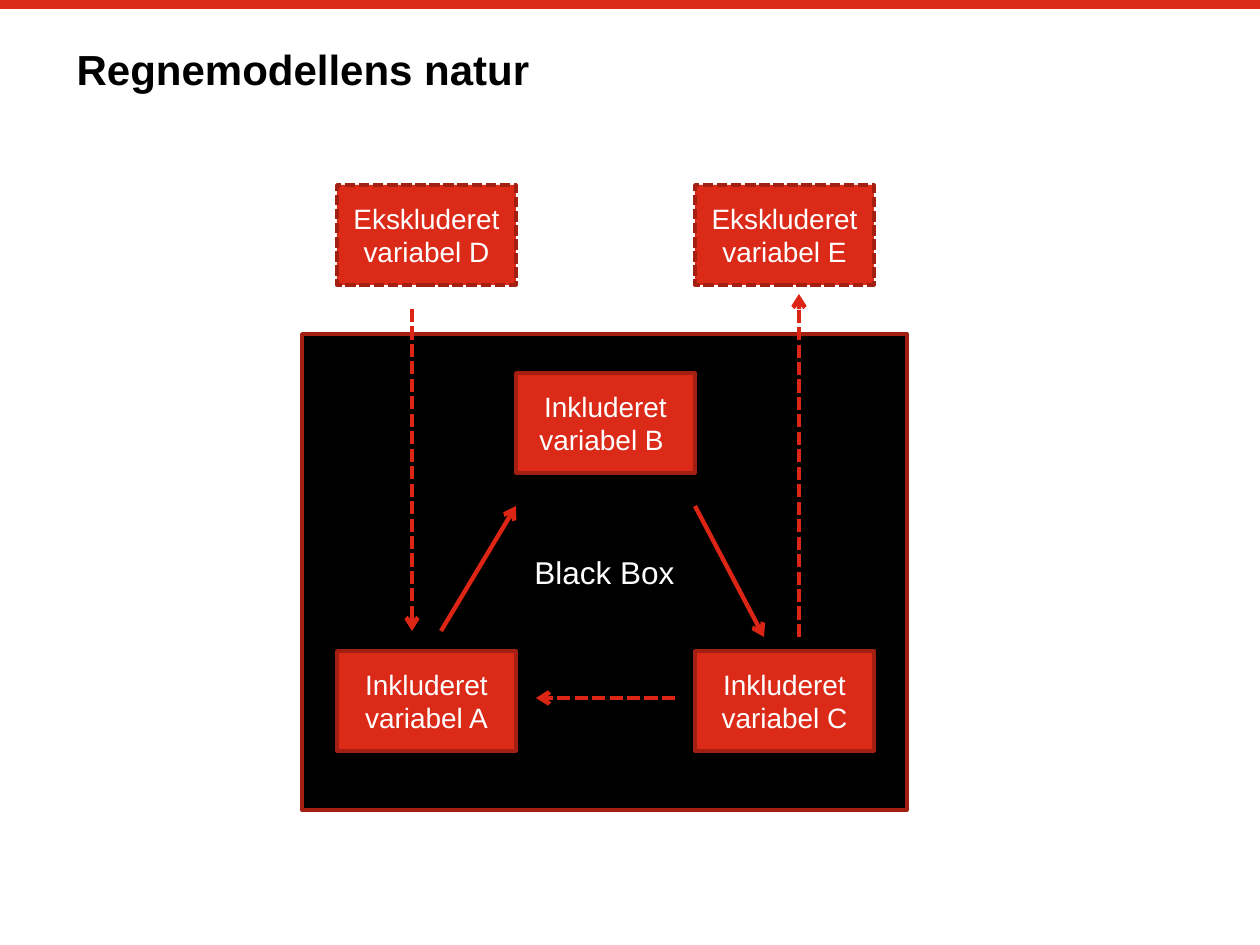
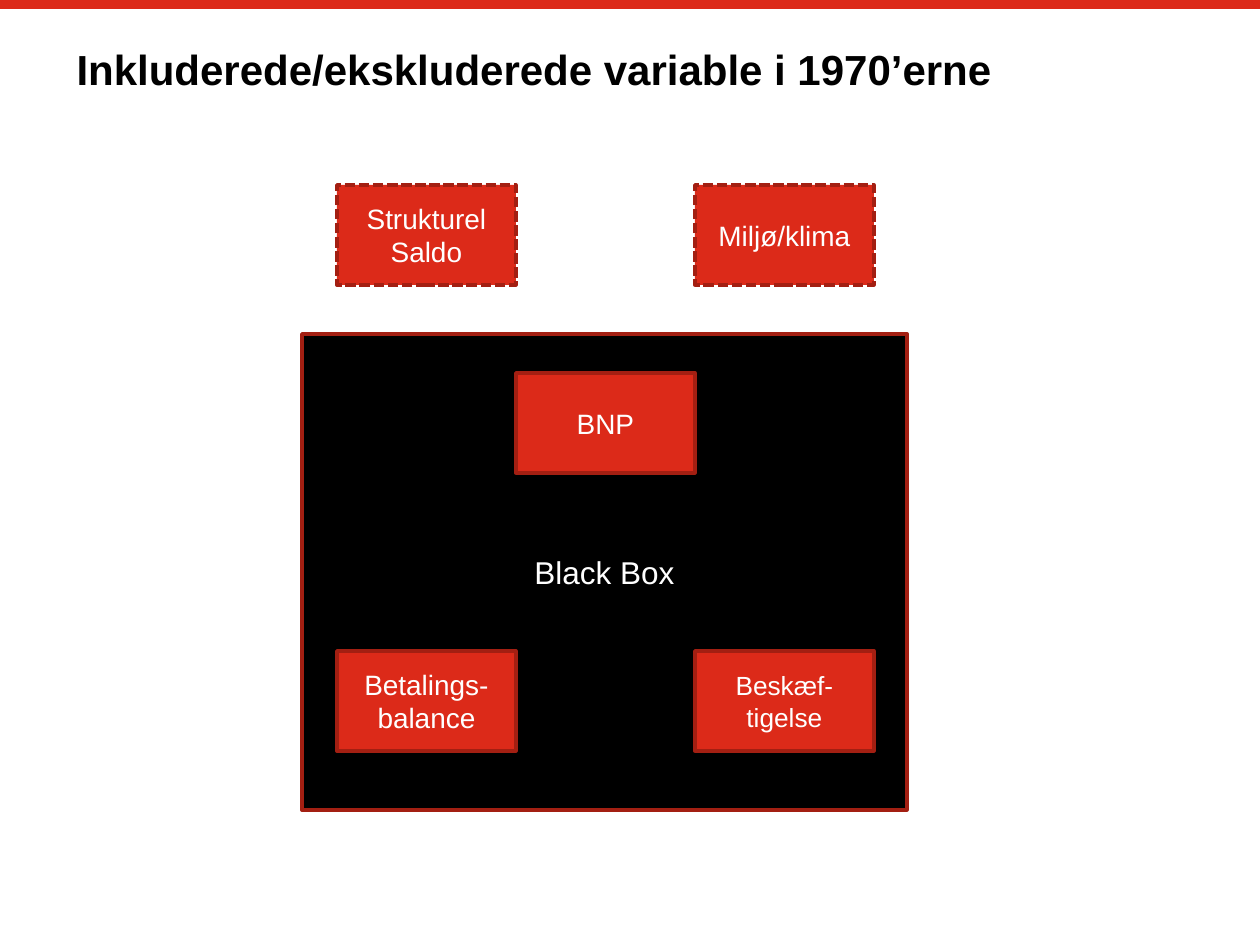
import pptx
import pptx.util
import pptx.dml.color
import pptx.enum.dml
import pptx.enum.shapes
import pptx.enum.text
import pptx.oxml.ns
import lxml.etree

RGB = pptx.dml.color.RGBColor
RED = RGB(0xDC, 0x2A, 0x19)
EDGE = RGB(0xA3, 0x1F, 0x12)
ARROW = RGB(0xDC, 0x25, 0x14)
BLACK = RGB(0, 0, 0)
WHITE = RGB(255, 255, 255)
DASH = pptx.enum.dml.MSO_LINE.SQUARE_DOT
RECT = pptx.enum.shapes.MSO_SHAPE.RECTANGLE
STRAIGHT = pptx.enum.shapes.MSO_CONNECTOR.STRAIGHT
ALIGN = pptx.enum.text.PP_ALIGN
ANCHOR = pptx.enum.text.MSO_ANCHOR
SCALE = 914400 / 126  # EMU in one px


def px(*nums):
    return [round(n * SCALE) for n in nums]


def write(shape, text, size=16, color=WHITE, bold=False,
          align=ALIGN.CENTER, anchor=ANCHOR.MIDDLE):
    frame = shape.text_frame
    frame.word_wrap = True
    frame.auto_size = pptx.enum.text.MSO_AUTO_SIZE.NONE
    frame.vertical_anchor = anchor
    par = frame.paragraphs[0]
    par.alignment = align
    run = par.add_run()
    run.text = text
    run.font.name = "Arial"
    run.font.size = pptx.util.Pt(size)
    run.font.bold = bold
    run.font.color.rgb = color


# Places of the variable boxes: left, top, dashed edge
WIDE, HIGH = 179, 100
LEFT, MID, RIGHT = 337, 516, 695
SPOTS = [(LEFT, 651, False), (MID, 373, False), (RIGHT, 651, False),
         (RIGHT, 185, True), (LEFT, 185, True)]

# Arrows: start, end, dashed
LINKS = [((441, 631), (516, 506), False),
         ((695, 506), (764, 637), False),
         ((799, 637), (799, 294), True),
         ((412, 309), (412, 631), True),
         ((675, 698), (536, 698), True)]

# Slides: title, texts and sizes in the order of the spots, arrows
PAGES = [
    ("Regnemodellens natur",
     [("Inkluderet variabel A", 16), ("Inkluderet variabel B ", 16),
      ("Inkluderet variabel C", 16), ("Ekskluderet variabel E", 16),
      ("Ekskluderet variabel D", 16)],
     LINKS),
    ("Inkluderede/ekskluderede variable i 1970’erne",
     [("Betalings-balance", 16), ("BNP", 16), ("Beskæf-tigelse", 15),
      ("Miljø/klima", 16), ("Strukturel Saldo", 16)],
     []),
]

deck = pptx.Presentation()
deck.slide_width, deck.slide_height = px(1260, 945)
layout = deck.slide_layouts.get_by_name("Title Only")

for name, labels, links in PAGES:
    slide = deck.slides.add_slide(layout)
    shapes = slide.shapes

    # Red band, moved once to the shared layout
    if len(deck.slides) == 1:
        band = shapes.add_shape(RECT, *px(0, 0, 1260, 9))
        band.shadow.inherit = False
        band.fill.solid()
        band.fill.fore_color.rgb = RED
        band.line.fill.background()
        layout.shapes.element.append(band.element)

    # Title
    title = shapes.title
    title.left, title.top, title.width, title.height = px(64, 37, 1134, 139)
    write(title, name, size=24, color=BLACK, bold=True,
          align=ALIGN.LEFT, anchor=ANCHOR.TOP)

    # Black box, then the variables
    boxes = [(302, 334, 605, 476, BLACK, False, "Black Box", 18)]
    for (x, y, dashed), (text, size) in zip(SPOTS, labels):
        boxes.append((x, y, WIDE, HIGH, RED, dashed, text, size))
    for x, y, w, h, fill, dashed, text, size in boxes:
        box = shapes.add_shape(RECT, *px(x, y, w, h))
        box.shadow.inherit = False
        box.fill.solid()
        box.fill.fore_color.rgb = fill
        box.line.color.rgb = EDGE
        box.line.width = pptx.util.Pt(2)
        if dashed:
            box.line.dash_style = DASH
        write(box, text, size=size)

    # Arrows between the variables
    for start, end, dashed in links:
        link = shapes.add_connector(STRAIGHT, *px(*start, *end))
        link.line.color.rgb = ARROW
        link.line.width = pptx.util.Pt(2.5)
        if dashed:
            link.line.dash_style = DASH
        props = link.element.spPr
        edge = props.find(pptx.oxml.ns.qn("a:ln"))
        head = lxml.etree.SubElement(edge, pptx.oxml.ns.qn("a:tailEnd"))
        head.set("type", "arrow")
        lxml.etree.SubElement(props, pptx.oxml.ns.qn("a:effectLst"))

deck.save("out.pptx")
